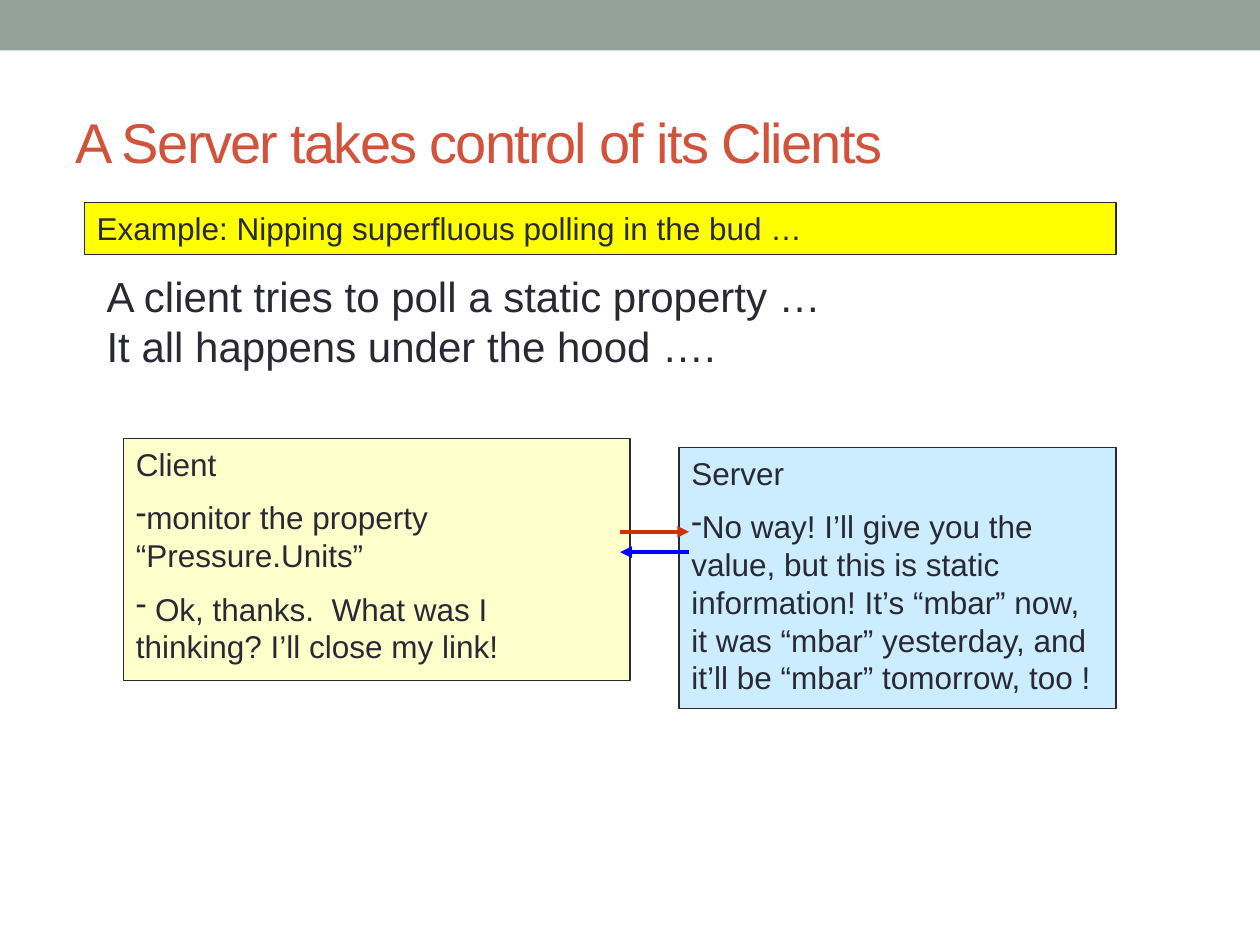
from dataclasses import dataclass

from lxml import etree
from pptx import Presentation
from pptx import util as u
from pptx.dml.color import RGBColor
from pptx.enum import shapes, text
from pptx.oxml import ns

INK = RGBColor(0x29, 0x29, 0x34)
TITLE_RED = RGBColor(0xD2, 0x53, 0x3C)
BAND_GREEN = RGBColor(0x93, 0xA2, 0x99)
YELLOW = RGBColor(0xFF, 0xFF, 0x00)
CLIENT_CREAM = RGBColor(0xFF, 0xFF, 0xCC)
SERVER_BLUE = RGBColor(0xCC, 0xEC, 0xFF)
REQUEST_RED = RGBColor(0xCC, 0x33, 0x00)
REPLY_BLUE = RGBColor(0x00, 0x00, 0xFF)

TITLE_FONT = {"name": "Arial", "size": u.Pt(32), "bold": False}
BOX_FONT = {"name": "Arial", "size": u.Pt(18)}
BODY_FONT = {"name": "Arial", "size": u.Pt(24)}


@dataclass(frozen=True)
class Area:
    left: float
    top: float
    width: float
    height: float

    def lengths(self) -> tuple:
        return tuple(u.Cm(v) for v in (self.left, self.top, self.width, self.height))


@dataclass(frozen=True)
class Box:
    area: Area
    fill: RGBColor
    heading: str
    bullets: tuple = ()


@dataclass(frozen=True)
class Arrow:
    start: float
    end: float
    height: float
    color: RGBColor


BOXES = (
    Box(Area(2.49, 8.84, 10.21, 4.88), CLIENT_CREAM, "Client",
        ("monitor the property “Pressure.Units”",
         " Ok, thanks.  What was I thinking? I’ll close my link!")),
    Box(Area(13.69, 9.02, 8.81, 5.26), SERVER_BLUE, "Server",
        ("No way! I’ll give you the value, but this is static information! "
         "It’s “mbar” now, it was “mbar” yesterday, and it’ll be “mbar” "
         "tomorrow, too !",)),
    Box(Area(1.7, 4.09, 20.8, 1.04), YELLOW,
        "Example: Nipping superfluous polling in the bud …"),
)
ARROWS = (
    Arrow(12.5, 13.89, 10.72, REQUEST_RED),
    Arrow(13.89, 12.5, 11.13, REPLY_BLUE),
)
BODY_LINES = (
    "A client tries to poll a static property …",
    "It all happens under the hood ….",
)


def apply_format(target, values: dict) -> None:
    for name, value in values.items():
        setattr(target, name, value)


def write(paragraph, words: str, font: dict, color: RGBColor):
    run = paragraph.add_run()
    run.text = words
    apply_format(run.font, font)
    run.font.color.rgb = color
    return run


def add_panel(slide, area: Area, fill: RGBColor):
    shape = slide.shapes.add_shape(shapes.MSO_SHAPE.RECTANGLE, *area.lengths())
    shape.shadow.inherit = False
    shape.fill.solid()
    shape.fill.fore_color.rgb = fill
    return shape


def add_band(slide) -> None:
    band = add_panel(slide, Area(0, 0, 25.4, 1.02), BAND_GREEN)
    band.line.fill.background()


def set_title(slide, words: str) -> None:
    title = slide.shapes.title
    left, top, width, height = Area(1.27, 1.47, 22.86, 2.74).lengths()
    apply_format(title, {"left": left, "top": top, "width": width, "height": height})
    title.text_frame.vertical_anchor = text.MSO_ANCHOR.MIDDLE
    paragraph = title.text_frame.paragraphs[0]
    paragraph.alignment = text.PP_ALIGN.LEFT
    run = write(paragraph, words, TITLE_FONT, TITLE_RED)
    run.font._element.set("spc", "-100")


def add_dash(paragraph) -> None:
    properties = paragraph._p.get_or_add_pPr()
    properties.set("marL", "0")
    properties.set("indent", "0")
    etree.SubElement(properties, ns.qn("a:buChar")).set("char", "-")


def add_box(slide, box: Box) -> None:
    shape = add_panel(slide, box.area, box.fill)
    shape.line.color.rgb = INK
    shape.line.width = u.Pt(0.75)
    frame = shape.text_frame
    apply_format(frame, {"word_wrap": True, "vertical_anchor": text.MSO_ANCHOR.TOP})
    for index, words in enumerate((box.heading, *box.bullets)):
        paragraph = frame.add_paragraph() if index else frame.paragraphs[0]
        apply_format(paragraph, {"alignment": text.PP_ALIGN.LEFT,
                                 "space_before": u.Pt(9)})
        if index:
            add_dash(paragraph)
        write(paragraph, words, BOX_FONT, INK)


def add_arrow(slide, arrow: Arrow) -> None:
    connector = slide.shapes.add_connector(
        shapes.MSO_CONNECTOR.STRAIGHT, u.Cm(arrow.start), u.Cm(arrow.height),
        u.Cm(arrow.end), u.Cm(arrow.height))
    connector.line.color.rgb = arrow.color
    connector.line.width = u.Pt(2.25)
    line = connector.line._get_or_add_ln()
    etree.SubElement(line, ns.qn("a:tailEnd")).set("type", "triangle")
    etree.SubElement(connector._element.spPr, ns.qn("a:effectLst"))


def add_body(slide) -> None:
    frame = slide.shapes.add_textbox(*Area(1.9, 5.33, 19, 2.31).lengths()).text_frame
    frame.word_wrap = True
    for index, words in enumerate(BODY_LINES):
        paragraph = frame.add_paragraph() if index else frame.paragraphs[0]
        write(paragraph, words, BODY_FONT, INK)


def main() -> None:
    presentation = Presentation()
    presentation.slide_width = u.Cm(25.4)
    presentation.slide_height = u.Cm(19.05)
    slide = presentation.slides.add_slide(presentation.slide_layouts[5])
    add_band(slide)
    set_title(slide, "A Server takes control of its Clients")
    client, server, example = BOXES
    for box in (client, server):
        add_box(slide, box)
    for arrow in ARROWS:
        add_arrow(slide, arrow)
    add_box(slide, example)
    add_body(slide)
    presentation.save("out.pptx")


if __name__ == "__main__":
    main()
